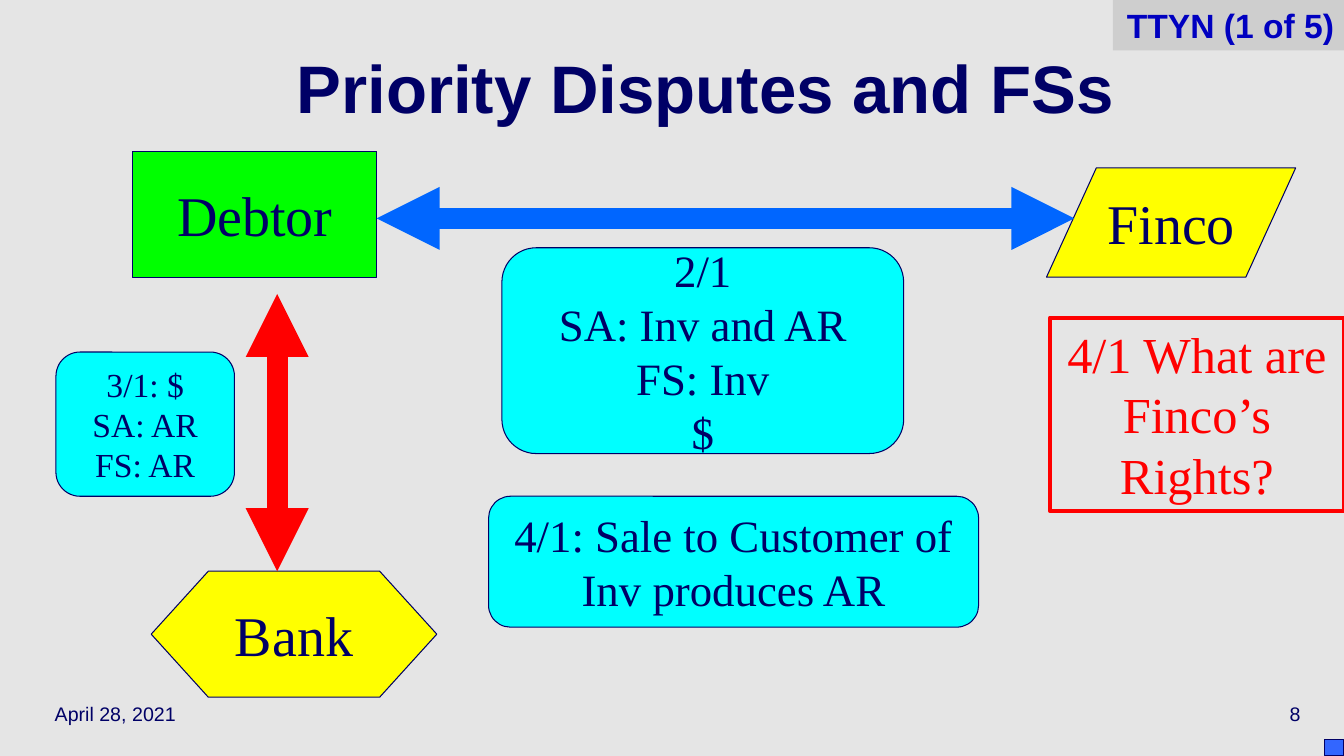
from lxml import etree
from pptx import Presentation
from pptx.dml.color import RGBColor
from pptx.enum.shapes import MSO_CONNECTOR, MSO_SHAPE as SHAPE
from pptx.enum.text import MSO_ANCHOR as ANCHOR, PP_ALIGN as ALIGN
from pptx.oxml.ns import qn
from pptx.util import Pt

NAVY = RGBColor(0x00, 0x00, 0x66)
DARK_BLUE = RGBColor(0x00, 0x00, 0xC0)
BLUE = RGBColor(0x00, 0x66, 0xFF)
CORNER_BLUE = RGBColor(0x33, 0x66, 0xFF)
RED = RGBColor(0xFF, 0x00, 0x00)
GREEN = RGBColor(0x00, 0xFF, 0x00)
YELLOW = RGBColor(0xFF, 0xFF, 0x00)
CYAN = RGBColor(0x00, 0xFF, 0xFF)
LIGHT_GRAY = RGBColor(0xE5, 0xE5, 0xE5)
TAB_GRAY = RGBColor(0xCE, 0xCE, 0xCE)
SERIF, SANS = "Times New Roman", "Arial"


def write(box, text, size, font=SERIF, color=NAVY, bold=False, align=ALIGN.CENTER,
          anchor=ANCHOR.MIDDLE, wrap=False, spacing=None):
    frame = box.text_frame
    frame.word_wrap = wrap
    frame.vertical_anchor = anchor
    for index, line in enumerate(text.split("\n")):
        para = frame.add_paragraph() if index else frame.paragraphs[0]
        para.alignment = align
        para.line_spacing = spacing
        span = para.add_run()
        span.text = line
        span.font.name = font
        span.font.size = Pt(size)
        span.font.bold = bold
        span.font.color.rgb = color


def add_box(kind, bounds, fill=None, line=NAVY, weight=0.75):
    box = page.shapes.add_shape(kind, *map(Pt, bounds))
    box.shadow.inherit = False
    if fill is None:
        box.fill.background()
    else:
        box.fill.solid()
        box.fill.fore_color.rgb = fill
    if line is None:
        box.line.fill.background()
    else:
        box.line.color.rgb = line
        box.line.width = Pt(weight)
    return box


deck = Presentation()
deck.slide_width, deck.slide_height = Pt(960), Pt(540)
page = deck.slides.add_slide(deck.slide_layouts[6])
page.background.fill.solid()
page.background.fill.fore_color.rgb = LIGHT_GRAY

labels = [
    ("April 28, 2021", (32, 492, 200, 36), dict(size=14, align=ALIGN.LEFT)),
    ("8", (736, 492, 200, 36), dict(size=14, align=ALIGN.RIGHT)),
    ("Priority Disputes and FSs", (64, 24, 880, 90), dict(size=48, bold=True, spacing=0.7)),
]
for text, bounds, style in labels:
    label = page.shapes.add_textbox(*map(Pt, bounds))
    write(label, text, font=SANS, wrap=True, **style)

parties = [
    ("Finco", SHAPE.FLOWCHART_DATA, (747.5, 120, 178, 78), YELLOW),
    ("Debtor", SHAPE.FLOWCHART_PROCESS, (95, 108, 174, 90), GREEN),
    ("Bank", SHAPE.FLOWCHART_PREPARATION, (108, 408, 204, 90), YELLOW),
]
for name, kind, bounds, fill in parties:
    write(add_box(kind, bounds, fill), name, 40)

arrows = [((269, 156, 767.5, 156), BLUE), ((198, 210, 198, 408), RED)]
for ends, color in arrows:
    arrow = page.shapes.add_connector(MSO_CONNECTOR.STRAIGHT, *map(Pt, ends))
    arrow.line.color.rgb = color
    arrow.line.width = Pt(15)
    outline = arrow.line._get_or_add_ln()
    for end in ("a:headEnd", "a:tailEnd"):
        etree.SubElement(outline, qn(end), type="triangle")
    etree.SubElement(arrow._element.spPr, qn("a:effectLst"))

events = [
    ("2/1\nSA: Inv and AR\nFS: Inv\n$", (358.5, 177, 287, 147), 32, False),
    ("3/1: $\nSA: AR\nFS: AR", (40, 251.5, 127.5, 103), 24, False),
    ("4/1: Sale to Customer of Inv produces AR", (349, 354.5, 350, 93.5), 32, True),
]
for text, bounds, size, wrap in events:
    event = add_box(SHAPE.FLOWCHART_ALTERNATE_PROCESS, bounds, CYAN)
    write(event, text, size, wrap=wrap, spacing=Pt(size * 1.2))

question = add_box(SHAPE.RECTANGLE, (750, 227, 210, 138), line=RED, weight=3)
write(question, "4/1 What are Finco’s Rights?", 36, color=RED,
      anchor=ANCHOR.TOP, wrap=True, spacing=Pt(43.2))

add_box(SHAPE.RECTANGLE, (946, 528, 14, 12), CORNER_BLUE)
tab = add_box(SHAPE.RECTANGLE, (795, 0, 165, 36), TAB_GRAY, line=None)
write(tab, "TTYN (1 of 5)", 24, font=SANS, color=DARK_BLUE, bold=True,
      align=ALIGN.RIGHT, anchor=ANCHOR.TOP, wrap=True)

deck.save("out.pptx")
